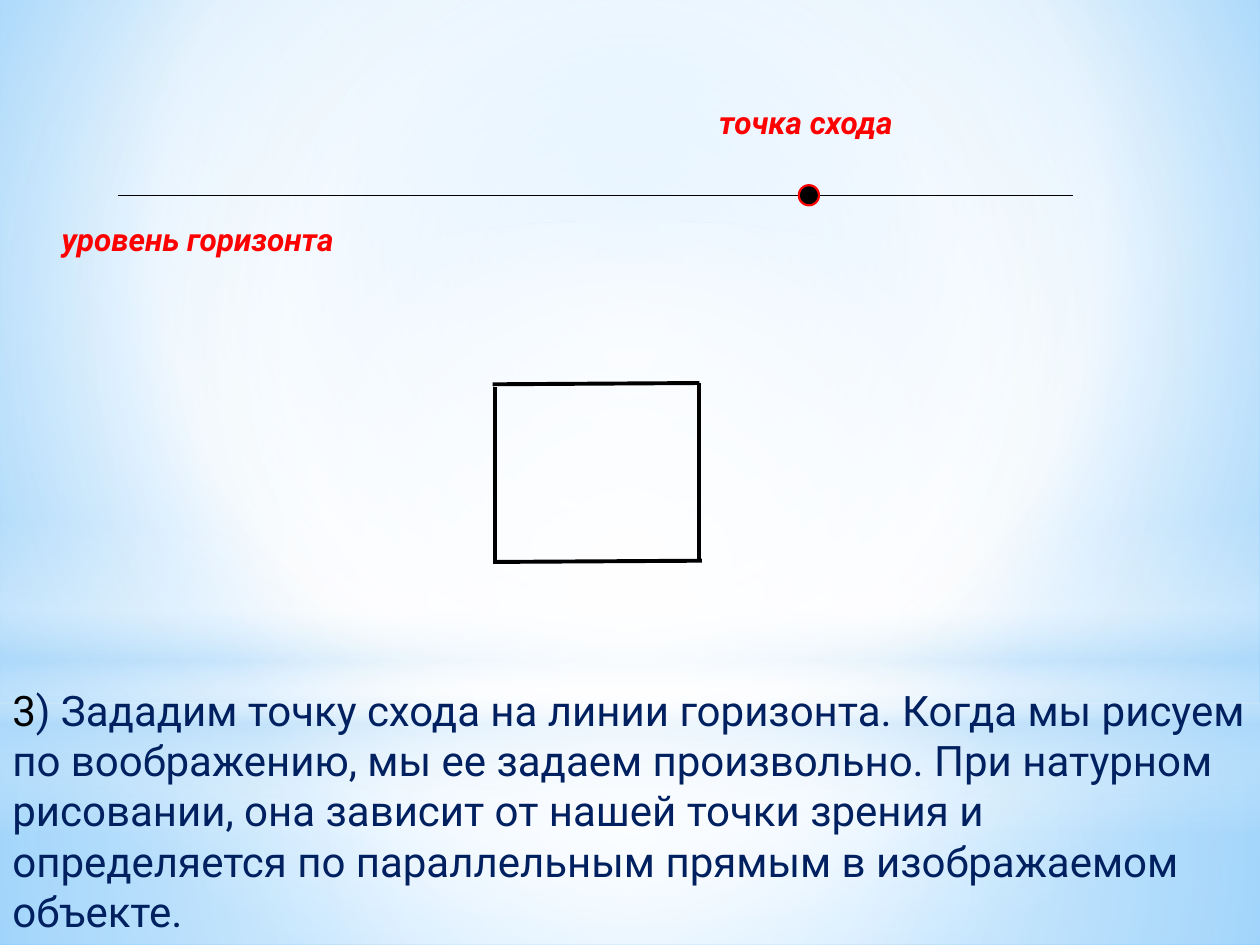
from lxml import etree
from pptx import Presentation
from pptx.dml.color import RGBColor
from pptx.enum.shapes import MSO_CONNECTOR, MSO_SHAPE
from pptx.enum.text import MSO_AUTO_SIZE
from pptx.oxml.ns import qn
from pptx.util import Inches, Pt

BLACK = RGBColor(0, 0, 0)
RED = RGBColor(255, 0, 0)
NAVY = RGBColor(0x00, 0x20, 0x60)
WHITE = RGBColor(255, 255, 255)
PALE = RGBColor(0xB4, 0xDC, 0xFA)
SKY = RGBColor(0x9E, 0xD5, 0xFF)
BLUE = RGBColor(0x5B, 0xB9, 0xFF)
MID = (50, 50, 50, 50)


def paint(fill, root, stops, focus):
    """Set a gradient of (place, colour, opacity); no focus means top to bottom."""
    fill.gradient()
    grad = next(root.iter(qn("a:gradFill")))
    for child in list(grad):
        grad.remove(child)
    items = etree.SubElement(grad, qn("a:gsLst"))
    for place, color, alpha in stops:
        stop = etree.SubElement(items, qn("a:gs"), pos=str(place * 1000))
        tint = etree.SubElement(stop, qn("a:srgbClr"), val=str(color))
        if alpha < 100:
            etree.SubElement(tint, qn("a:alpha"), val=str(alpha * 1000))
    if focus:
        path = etree.SubElement(grad, qn("a:path"), path="circle")
        sides = {s: str(v * 1000) for s, v in zip("ltrb", focus)}
        etree.SubElement(path, qn("a:fillToRect"), **sides)
    else:
        etree.SubElement(grad, qn("a:lin"), ang="5400000", scaled="0")


def write(box, runs, size, bold=False):
    """Add a text box with (text, colour) runs."""
    frame = slide.shapes.add_textbox(*map(Inches, box)).text_frame
    frame.word_wrap = not bold
    frame.auto_size = MSO_AUTO_SIZE.SHAPE_TO_FIT_TEXT
    for text, color in runs:
        run = frame.paragraphs[0].add_run()
        run.text = text
        font = run.font
        font.name = "Roboto"
        font.size = Pt(size)
        font.bold = font.italic = bold
        font.color.rgb = color


deck = Presentation()
deck.slide_width, deck.slide_height = Inches(10), Inches(7.5)
slide = deck.slides.add_slide(deck.slide_layouts[6])

# Background
paint(slide.background.fill, slide.element,
      [(0, SKY, 100), (60, WHITE, 100), (100, BLUE, 100)], (20, 10, 20, 60))

# Soft light panels: shape, top, height, stops, focus
panels = [
    (MSO_SHAPE.RECTANGLE, 5.58, 1.92,
     [(0, WHITE, 91), (37, WHITE, 76), (100, PALE, 79)], MID),
    (MSO_SHAPE.RECTANGLE, 0, 5.58,
     [(0, WHITE, 89), (48, WHITE, 62), (100, PALE, 79)], MID),
    (MSO_SHAPE.RECTANGLE, 4.12, 2.5,
     [(0, WHITE, 0), (29, WHITE, 30), (45, PALE, 40), (55, WHITE, 26),
      (65, PALE, 60), (100, WHITE, 0)], None),
    (MSO_SHAPE.OVAL, 1.75, 5.58, [(0, WHITE, 100), (56, WHITE, 0)], MID),
]
for kind, top, high, stops, focus in panels:
    panel = slide.shapes.add_shape(kind, 0, Inches(top), Inches(10), Inches(high))
    panel.shadow.inherit = False
    panel.line.fill.background()
    paint(panel.fill, panel.element, stops, focus)

# Horizon, then the four sides of the square
lines = [
    (0.94, 1.55, 8.52, 1.55, 0.75),
    (3.93, 3.07, 3.93, 4.48, 2.25),
    (5.57, 4.45, 3.93, 4.46, 2.25),
    (5.55, 3.04, 5.55, 4.45, 2.25),
    (5.55, 3.04, 3.91, 3.05, 2.25),
]
for *ends, width in lines:
    line = slide.shapes.add_connector(MSO_CONNECTOR.STRAIGHT, *map(Inches, ends))
    line.line.color.rgb = BLACK
    line.line.width = Pt(width)
    etree.SubElement(line.element.spPr, qn("a:effectLst"))

# Labels
write((5.61, 0.77, 1.77, 0.4), [("точка схода", RED)], 18, True)
write((0.39, 1.7, 2.7, 0.4), [("уровень горизонта", RED)], 18, True)

# Vanishing point
dot = slide.shapes.add_shape(MSO_SHAPE.OVAL, *map(Inches, (6.34, 1.47, 0.16, 0.16)))
dot.shadow.inherit = False
dot.fill.solid()
dot.fill.fore_color.rgb = BLACK
dot.line.color.rgb = RED
dot.line.width = Pt(1.25)

# Explanation
note = (") Зададим точку схода на линии горизонта. Когда мы рисуем по воображению, "
        "мы ее задаем произвольно. При натурном рисовании, она зависит от нашей "
        "точки зрения и определяется по параллельным прямым в изображаемом объекте.")
write((0, 5.38, 10, 2.12), [("3", BLACK), (note, NAVY)], 24)

deck.save("out.pptx")
